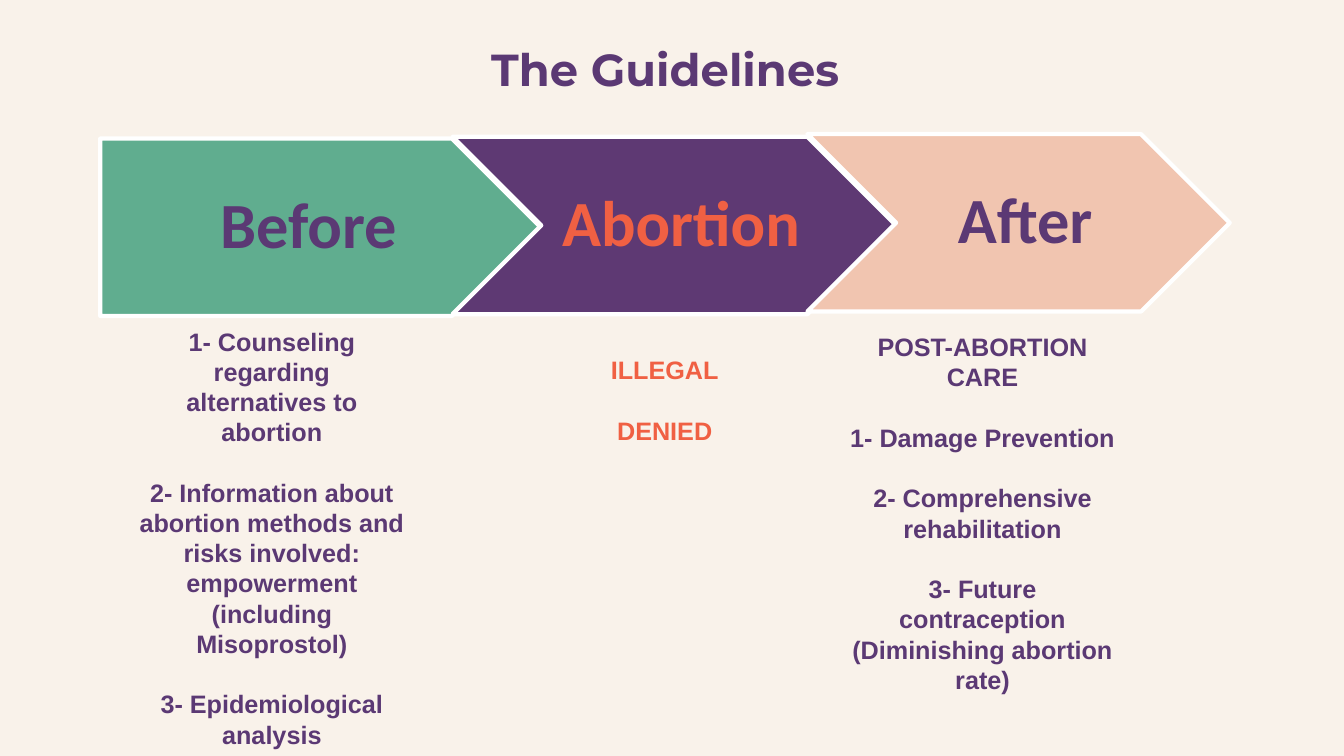
from pptx import Presentation
from pptx.dml.color import RGBColor
from pptx.enum.shapes import MSO_SHAPE
from pptx.enum.text import MSO_ANCHOR, MSO_AUTO_SIZE, PP_ALIGN
from pptx.util import Pt

PENTAGON = MSO_SHAPE.PENTAGON
CHEVRON = MSO_SHAPE.CHEVRON
MIDDLE = MSO_ANCHOR.MIDDLE
TOP = MSO_ANCHOR.TOP
CENTER = PP_ALIGN.CENTER
NO_AUTOFIT = MSO_AUTO_SIZE.NONE

PURPLE = "5B3974"
ORANGE = "F06043"
ARROW_HEIGHT = 126.7
ITEM_GAP = 21.6

ARROWS = [
    ("Before", PENTAGON, 71.6, 99, 314.6, "60AD8F", PURPLE, 19.4),
    ("Abortion", CHEVRON, 323.3, 97.7, 316.8, "5E3973", ORANGE, 14.4),
    ("After", CHEVRON, 576.7, 95.8, 301.7, "F1C5B0", PURPLE, 14.4),
]
BEFORE_ITEMS = [
    "1- Counseling regarding\valternatives to abortion",
    "2- Information about\vabortion methods and\vrisks involved:\vempowerment\v"
    "(including Misoprostol)",
    "3- Epidemiological\vanalysis",
]
ABORTION_ITEMS = ["ILLEGAL", "DENIED"]
AFTER_ITEMS = [
    "POST-ABORTION CARE",
    "1- Damage Prevention",
    "2- Comprehensive\vrehabilitation",
    "3- Future contraception\v(Diminishing abortion rate)",
]


def rgb(value):
    return RGBColor.from_string(value)


def format_paragraph(p, font, size, color):
    p.alignment = CENTER
    for r in p.runs:
        r.font.name = font
        r.font.size = Pt(size)
        r.font.bold = True
        r.font.color.rgb = rgb(color)


def set_title(slide, text):
    s = slide.shapes.title
    s.left, s.top, s.width, s.height = Pt(301), Pt(26), Pt(348.5), Pt(46)
    tf = s.text_frame
    tf.text = text
    tf.auto_size = NO_AUTOFIT
    tf.vertical_anchor = MIDDLE
    format_paragraph(tf.paragraphs[0], "Montserrat", 32, PURPLE)


def add_arrow(slide, text, kind, left, top, width, fill, color, inset):
    s = slide.shapes.add_shape(kind, Pt(left), Pt(top), Pt(width), Pt(ARROW_HEIGHT))
    s.shadow.inherit = False
    s.fill.solid()
    s.fill.fore_color.rgb = rgb(fill)
    s.line.color.rgb = rgb("FFFFFF")
    s.line.width = Pt(3)
    tf = s.text_frame
    tf.text = text
    tf.word_wrap = True
    tf.vertical_anchor = MIDDLE
    tf.margin_left, tf.margin_right = Pt(inset), Pt(5)
    tf.margin_top = tf.margin_bottom = Pt(9.4)
    p = tf.paragraphs[0]
    p.line_spacing = 0.9
    format_paragraph(p, "Calibri", 46, color)


def add_items(slide, items, left, top, width, height, color):
    s = slide.shapes.add_textbox(Pt(left), Pt(top), Pt(width), Pt(height))
    tf = s.text_frame
    tf.word_wrap = True
    tf.vertical_anchor = TOP
    for i, item in enumerate(items):
        p = tf.add_paragraph() if i else tf.paragraphs[0]
        p.text = item
        if i:
            p.space_before = Pt(ITEM_GAP)
        format_paragraph(p, "Arial", 18, color)


def main():
    prs = Presentation()
    prs.slide_width, prs.slide_height = Pt(960), Pt(540)
    slide = prs.slides.add_slide(prs.slide_layouts[5])
    slide.background.fill.solid()
    slide.background.fill.fore_color.rgb = rgb("F9F2EA")
    set_title(slide, "The Guidelines")
    for arrow in ARROWS:
        add_arrow(slide, *arrow)
    add_items(slide, BEFORE_ITEMS, 88, 229.2, 212.4, 310, PURPLE)
    add_items(slide, ABORTION_ITEMS, 234.7, 249.8, 480.2, 72.7, ORANGE)
    add_items(slide, AFTER_ITEMS, 595.6, 233.3, 212.4, 269.3, PURPLE)
    prs.save("out.pptx")


if __name__ == "__main__":
    main()
